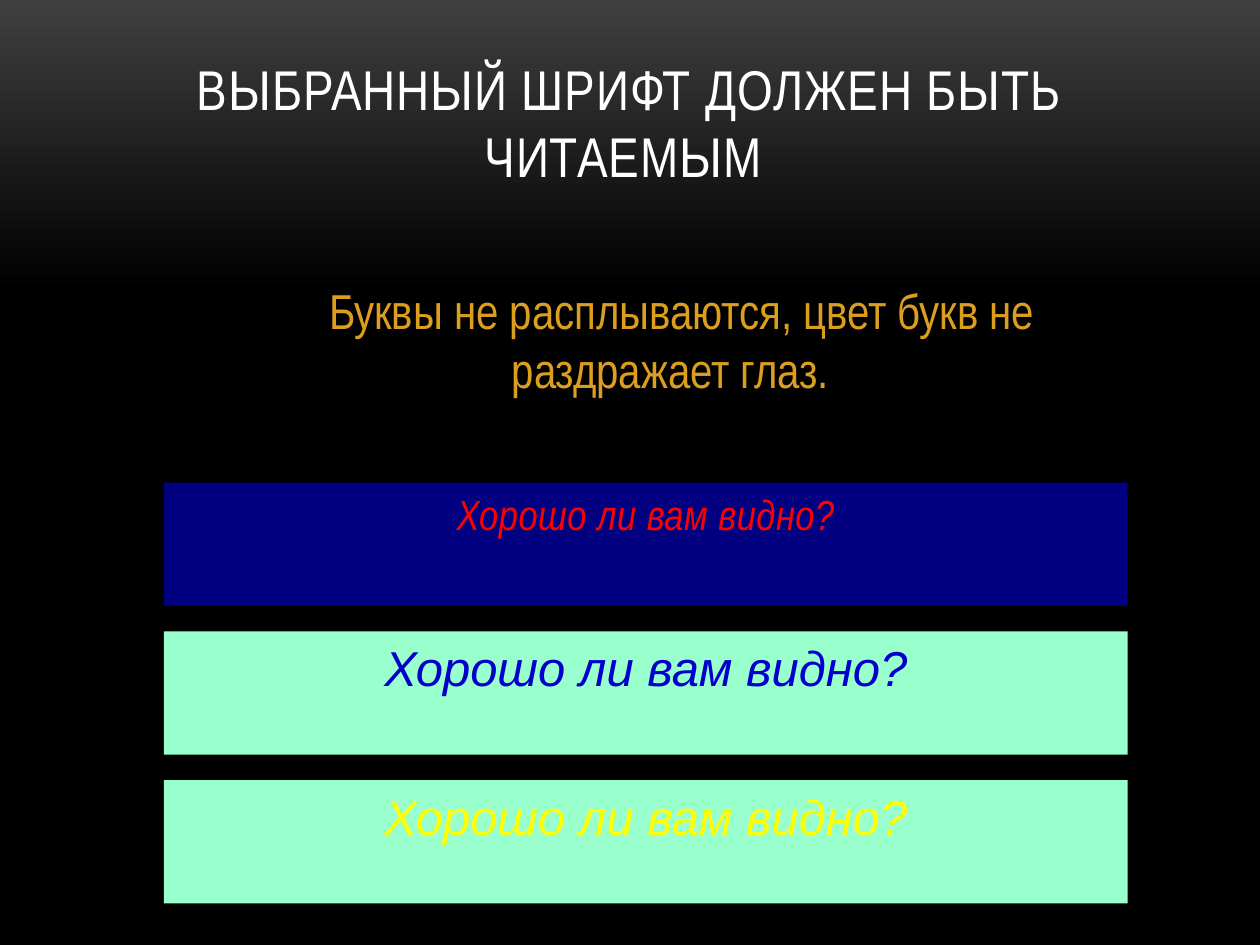
from pptx import Presentation
from pptx.dml.color import RGBColor
from pptx.enum.shapes import MSO_SHAPE
from pptx.enum.text import MSO_ANCHOR, MSO_AUTO_SIZE, PP_ALIGN
from pptx.util import Pt

CENTER = PP_ALIGN.CENTER
TOP, BOTTOM = MSO_ANCHOR.TOP, MSO_ANCHOR.BOTTOM
FIXED = MSO_AUTO_SIZE.NONE
RECTANGLE = MSO_SHAPE.RECTANGLE
TITLE_ONLY = 5

NARROW = "Arial Narrow"
QUESTION = "Хорошо ли вам видно?"
SAMPLES = [
    ("000080", "FF0000", NARROW, 24, 0.3),
    ("99FFCC", "0000CC", "Arial", 28, 0),
    ("99FFCC", "FFFF00", "Arial", 28, 0),
]
SAMPLE_LEFT, SAMPLE_TOP = 93.6, 275.8
SAMPLE_WIDTH, SAMPLE_HEIGHT, SAMPLE_STEP = 550.8, 70.5, 85


def rgb(value):
    return RGBColor.from_string(value)


def write(frame, text, font, size, color, anchor=TOP, italic=False, spacing=0):
    frame.word_wrap = True
    frame.auto_size = FIXED
    frame.vertical_anchor = anchor
    paragraph = frame.paragraphs[0]
    paragraph.alignment = CENTER
    run = paragraph.add_run()
    run.text = text
    run.font.name = font
    run.font.size = Pt(size)
    run.font.italic = italic
    run.font.color.rgb = rgb(color)
    if spacing:
        run.font._element.set("spc", str(round(spacing * 100)))
    return paragraph


def paint_background(slide):
    fill = slide.background.fill
    fill.gradient()
    fill.gradient_angle = 270
    for stop, (position, color) in zip(
        fill.gradient_stops, [(0, "3F3F3F"), (0.31, "000000")]
    ):
        stop.position = position
        stop.color.rgb = rgb(color)


def add_title(slide):
    title = slide.shapes.title
    title.left, title.top = Pt(48), Pt(21.6)
    title.width, title.height = Pt(624), Pt(90)
    write(title.text_frame, "ВЫБРАННЫЙ ШРИФТ ДОЛЖЕН БЫТЬ ЧИТАЕМЫМ ",
          NARROW, 32, "FFFFFF", anchor=BOTTOM, spacing=0.5)


def add_sample(slide, top, background, color, font, size, spacing):
    sample = slide.shapes.add_shape(
        RECTANGLE, Pt(SAMPLE_LEFT), Pt(top), Pt(SAMPLE_WIDTH), Pt(SAMPLE_HEIGHT)
    )
    sample.shadow.inherit = False
    sample.fill.solid()
    sample.fill.fore_color.rgb = rgb(background)
    sample.line.fill.background()
    write(sample.text_frame, QUESTION, font, size, color,
          italic=True, spacing=spacing)


def add_advice(slide):
    advice = slide.shapes.add_textbox(Pt(105.1), Pt(157), Pt(555.8), Pt(74.2))
    paragraph = write(advice.text_frame,
                      "Буквы не расплываются, цвет букв не раздражает глаз.",
                      NARROW, 28, "DC9E1F")
    paragraph._p.get_or_add_pPr().set("indent", str(Pt(12.8)))


def main():
    presentation = Presentation()
    presentation.slide_width, presentation.slide_height = Pt(720), Pt(540)
    slide = presentation.slides.add_slide(presentation.slide_layouts[TITLE_ONLY])
    paint_background(slide)
    add_title(slide)
    for row, sample in enumerate(SAMPLES):
        add_sample(slide, SAMPLE_TOP + row * SAMPLE_STEP, *sample)
    add_advice(slide)
    presentation.save("out.pptx")


if __name__ == "__main__":
    main()
